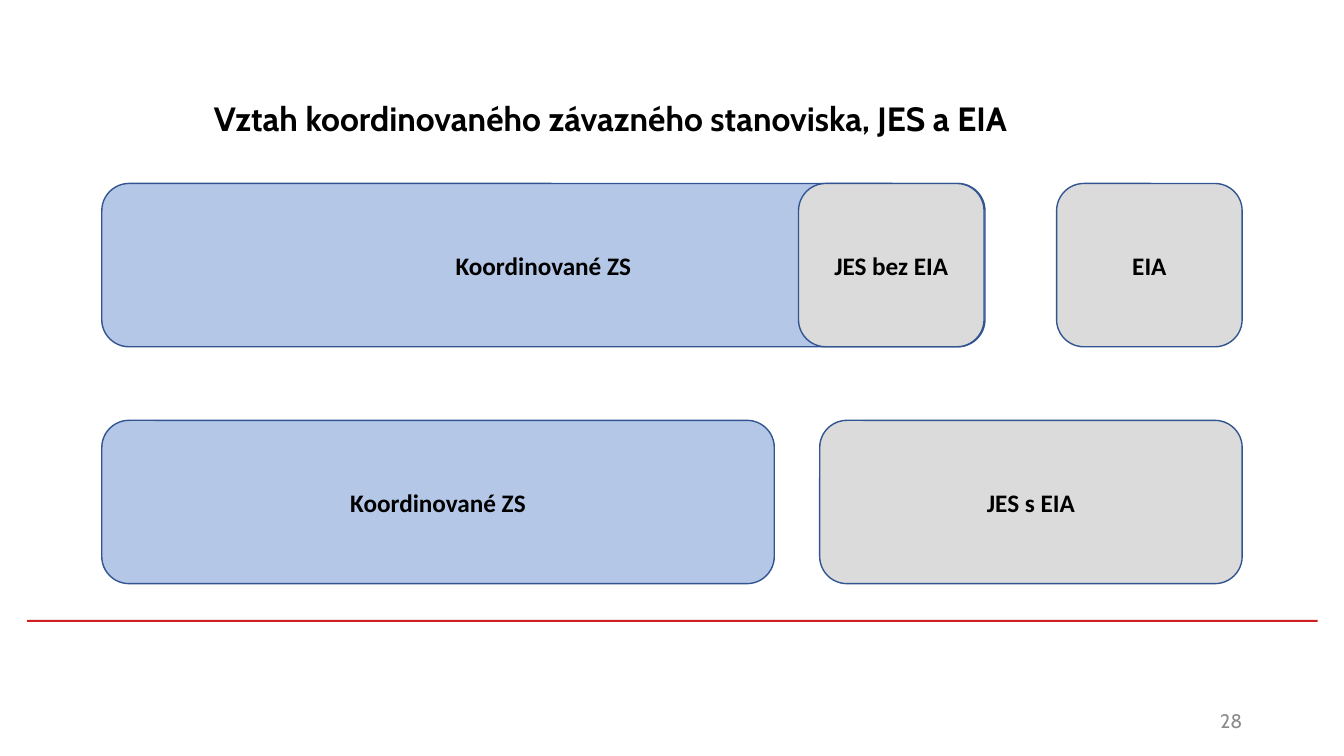
from dataclasses import dataclass

import pptx
import pptx.dml.color
import pptx.enum.shapes
import pptx.enum.text
import pptx.util
from pptx.dml.color import RGBColor
from pptx.util import Inches

BLACK = RGBColor(0x00, 0x00, 0x00)
GREY_TEXT = RGBColor(0x8C, 0x8C, 0x8C)
GREY_FILL = RGBColor(0xDB, 0xDB, 0xDB)
BLUE_FILL = RGBColor(0xB4, 0xC7, 0xE7)
OUTLINE = RGBColor(0x32, 0x54, 0x91)
RED = RGBColor(0xCD, 0x1F, 0x21)

TOP_ROW = 1.82
BOTTOM_ROW = 4.17
BLOCK_HEIGHT = 1.62


@dataclass
class Block:
    label: str
    left: float
    top: float
    width: float
    fill: RGBColor


BLOCKS = [
    Block("JES s EIA", 8.13, BOTTOM_ROW, 4.19, GREY_FILL),
    Block("EIA", 10.48, TOP_ROW, 1.84, GREY_FILL),
    Block("Koordinované ZS", 1.01, TOP_ROW, 8.76, BLUE_FILL),
    Block("JES bez EIA", 7.92, TOP_ROW, 1.84, GREY_FILL),
    Block("Koordinované ZS", 1.01, BOTTOM_ROW, 6.67, BLUE_FILL),
]


def write(shape, text: str, font: str, size: float, color: RGBColor, bold: bool,
          align: pptx.enum.text.PP_ALIGN) -> None:
    """Put one vertically centred line of text into the shape."""
    frame = shape.text_frame
    frame.word_wrap = True
    frame.auto_size = pptx.enum.text.MSO_AUTO_SIZE.NONE
    frame.vertical_anchor = pptx.enum.text.MSO_ANCHOR.MIDDLE
    para = frame.paragraphs[0]
    para.alignment = align
    span = para.add_run()
    span.text = text
    span.font.name = font
    span.font.size = pptx.util.Pt(size)
    span.font.bold = bold
    span.font.color.rgb = color


def draw_rule(page) -> None:
    rule = page.shapes.add_shape(
        pptx.enum.shapes.MSO_SHAPE.RECTANGLE,
        Inches(0.27), Inches(6.15), Inches(12.8), Inches(0.02))
    rule.shadow.inherit = False
    rule.fill.solid()
    rule.fill.fore_color.rgb = RED
    rule.line.fill.background()


def draw_block(page, block: Block) -> None:
    box = page.shapes.add_shape(
        pptx.enum.shapes.MSO_SHAPE.ROUNDED_RECTANGLE,
        Inches(block.left), Inches(block.top), Inches(block.width), Inches(BLOCK_HEIGHT))
    box.shadow.inherit = False
    box.fill.solid()
    box.fill.fore_color.rgb = block.fill
    box.line.color.rgb = OUTLINE
    box.line.width = pptx.util.Pt(1)
    write(box, block.label, "Calibri", 18, BLACK, True, pptx.enum.text.PP_ALIGN.CENTER)


def main() -> None:
    deck = pptx.Presentation()
    deck.slide_width = Inches(13.33)
    deck.slide_height = Inches(7.5)
    page = deck.slides.add_slide(deck.slide_layouts.get_by_name("Title Only"))

    draw_rule(page)

    title = page.shapes.title
    title.left, title.top = Inches(2.02), Inches(0.97)
    title.width, title.height = Inches(10.16), Inches(0.4)
    write(title, "Vztah koordinovaného závazného stanoviska, JES a EIA",
          "Cabin", 24, BLACK, True, pptx.enum.text.PP_ALIGN.LEFT)

    number = page.shapes.add_textbox(Inches(9.42), Inches(6.95), Inches(3), Inches(0.4))
    write(number, "28", "Cabin", 14, GREY_TEXT, False, pptx.enum.text.PP_ALIGN.RIGHT)

    for block in BLOCKS:
        draw_block(page, block)

    deck.save("out.pptx")


if __name__ == "__main__":
    main()
